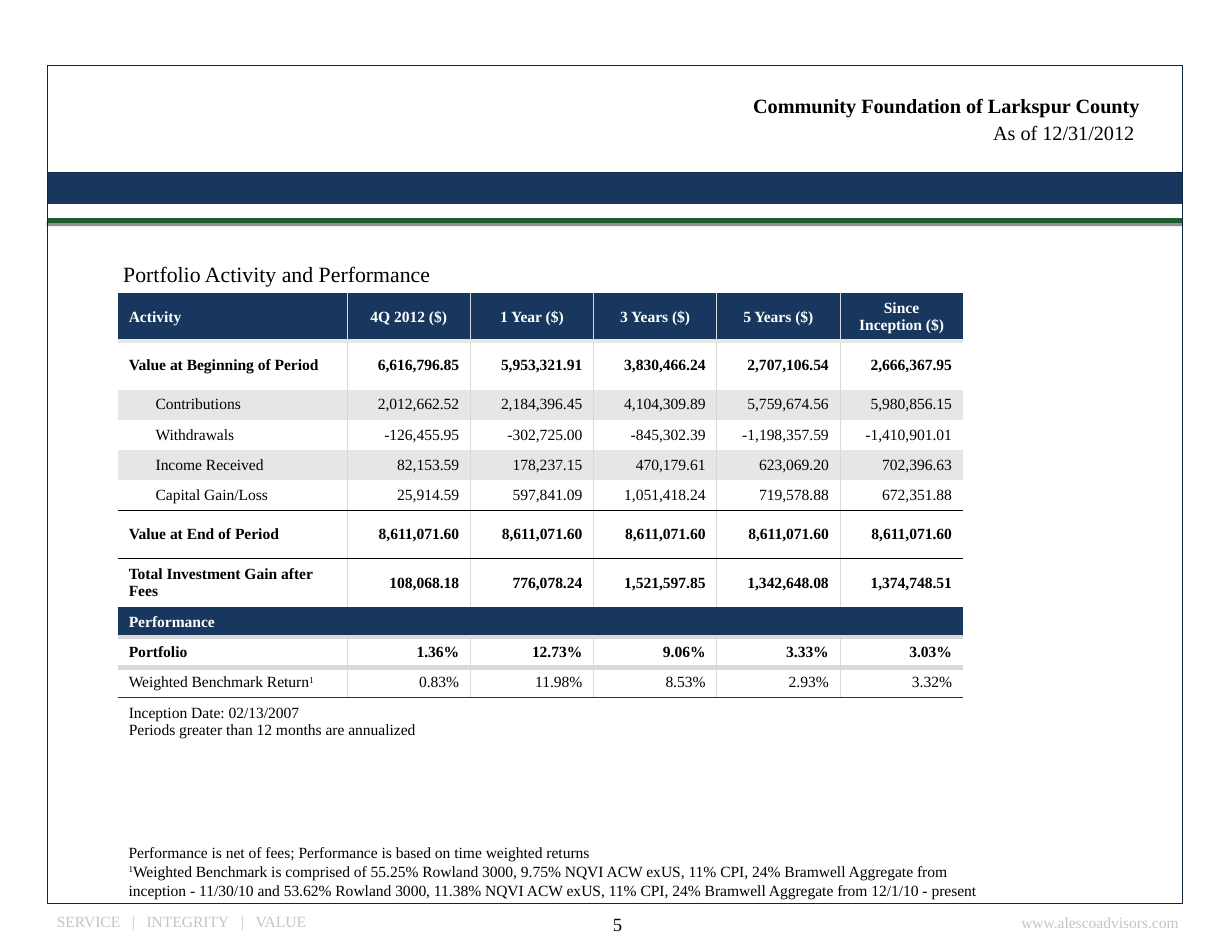
import pptx
import pptx.util
import pptx.dml.color
import pptx.enum.shapes
import pptx.enum.text
import pptx.oxml.ns
from lxml import etree

Inches, Pt = pptx.util.Inches, pptx.util.Pt
ALIGN, ANCHOR = pptx.enum.text.PP_ALIGN, pptx.enum.text.MSO_ANCHOR
FONT = "Times New Roman"
NAVY, EDGE, GREEN = "17375E", "10253F", "215B33"
BLACK, WHITE, PALE, RULE, FAINT = "000000", "FFFFFF", "E6E6E6", "D9D9D9", "C5C5C5"

# Content
TITLE = "Community Foundation of Larkspur County"
AS_OF = "As of 12/31/2012 "
MOTTO = ["SERVICE", "INTEGRITY", "VALUE"]
SITE = "www.alescoadvisors.com"
NOTES = [
    [("Performance is net of fees; Performance is based on time weighted returns", {})],
    [("1", {"sup": True}),
     ("Weighted Benchmark is comprised of 55.25% Rowland 3000, 9.75% NQVI ACW exUS, 11% CPI, "
      "24% Bramwell Aggregate from inception - 11/30/10 and 53.62% Rowland 3000, "
      "11.38% NQVI ACW exUS, 11% CPI, 24% Bramwell Aggregate from 12/1/10 - present", {})],
]

# Each row: kind, label, values
ROWS = [
    ("title", "Portfolio Activity and Performance", []),
    ("head", "Activity", ["4Q 2012 ($)", "1 Year ($)", "3 Years ($)", "5 Years ($)",
                          "Since Inception ($)"]),
    ("total", "Value at Beginning of Period",
     ["6,616,796.85", "5,953,321.91", "3,830,466.24", "2,707,106.54", "2,666,367.95"]),
    ("shaded", "Contributions",
     ["2,012,662.52", "2,184,396.45", "4,104,309.89", "5,759,674.56", "5,980,856.15"]),
    ("item", "Withdrawals",
     ["-126,455.95", "-302,725.00", "-845,302.39", "-1,198,357.59", "-1,410,901.01"]),
    ("shaded", "Income Received",
     ["82,153.59", "178,237.15", "470,179.61", "623,069.20", "702,396.63"]),
    ("item", "Capital Gain/Loss",
     ["25,914.59", "597,841.09", "1,051,418.24", "719,578.88", "672,351.88"]),
    ("total", "Value at End of Period", ["8,611,071.60"] * 5),
    ("total", "Total Investment Gain after Fees",
     ["108,068.18", "776,078.24", "1,521,597.85", "1,342,648.08", "1,374,748.51"]),
    ("band", "Performance", []),
    ("result", "Portfolio", ["1.36%", "12.73%", "9.06%", "3.33%", "3.03%"]),
    ("plain", "Weighted Benchmark Return", ["0.83%", "11.98%", "8.53%", "2.93%", "3.32%"]),
    ("foot", "Inception Date: 02/13/2007\nPeriods greater than 12 months are annualized", []),
]
SUPERSCRIPTS = {"Weighted Benchmark Return": "1"}
COLUMNS = [0.23, 1.81] + [1.1] * 5

# Row kind: height, fill, run format
SMALL, TALL = 0.27, 0.43
KINDS = {
    "title": (0.33, WHITE, {"size": 14}),
    "head": (TALL, NAVY, {"bold": True, "color": WHITE}),
    "total": (TALL, WHITE, {"bold": True}),
    "shaded": (SMALL, PALE, {}),
    "item": (SMALL, WHITE, {}),
    "band": (SMALL, NAVY, {"bold": True, "color": WHITE}),
    "result": (SMALL, WHITE, {"bold": True}),
    "plain": (SMALL, WHITE, {}),
    "foot": (TALL, WHITE, {}),
}
# Horizontal rules below rows, by row number
RULES = {1: (PALE, 3), 6: (BLACK, 1), 7: (BLACK, 1), 8: (NAVY, 0.5),
         9: (RULE, 3), 10: (RULE, 3), 11: (NAVY, 0.5)}


def rgb(hex_color):
    return pptx.dml.color.RGBColor.from_string(hex_color)


def sub(parent, tag, **attrs):
    return etree.SubElement(parent, pptx.oxml.ns.qn(tag), {k: str(v) for k, v in attrs.items()})


def add_run(p, text, size=10, bold=False, color=BLACK, sup=False, spacing=0):
    r = p.add_run()
    r.text = text
    for name, value in {"name": FONT, "size": Pt(size), "bold": bold}.items():
        setattr(r.font, name, value)
    r.font.color.rgb = rgb(color)
    if sup:
        r.font._element.set("baseline", "30000")
    if spacing:
        r.font._element.set("spc", str(spacing))


def add_text(s, box, paragraphs, align=ALIGN.LEFT, wrap=True):
    tf = s.shapes.add_textbox(*map(Inches, box)).text_frame
    tf.word_wrap = wrap
    for i, runs in enumerate(paragraphs):
        p = tf.add_paragraph() if i else tf.paragraphs[0]
        p.alignment = align
        for text, fmt in runs:
            add_run(p, text, **fmt)


def add_box(s, box, fill, line):
    sp = s.shapes.add_shape(pptx.enum.shapes.MSO_SHAPE.RECTANGLE, *map(Inches, box))
    sp.shadow.inherit = False
    if fill:
        sp.fill.solid()
        sp.fill.fore_color.rgb = rgb(fill)
    else:
        sp.fill.background()
    sp.line.color.rgb = rgb(line)
    sp.line.width = Pt(0.5)


def add_border(cell, side, rule):
    tc_pr = cell._tc.get_or_add_tcPr()
    if rule:
        ln = sub(tc_pr, "a:ln" + side, w=Pt(rule[1]))
        sub(sub(ln, "a:solidFill"), "a:srgbClr", val=rule[0])
    else:
        sub(sub(tc_pr, "a:ln" + side, w=0), "a:noFill")


def add_table(s, left, top):
    heights = [KINDS[kind][0] for kind, _, _ in ROWS]
    frame = s.shapes.add_table(len(ROWS), len(COLUMNS), Inches(left), Inches(top),
                               Inches(sum(COLUMNS)), Inches(sum(heights)))
    table = frame.table
    table.first_row = table.horz_banding = False
    style = table._tbl.tblPr.find(pptx.oxml.ns.qn("a:tableStyleId"))
    style.text = "{2D5ABB26-0587-4C30-8999-92F81FD0307C}"
    for column, width in zip(table.columns, COLUMNS):
        column.width = Inches(width)
    last = len(COLUMNS) - 1
    for i, (kind, label, values) in enumerate(ROWS):
        height, fill, fmt = KINDS[kind]
        table.rows[i].height = Inches(height)
        indented = kind in ("shaded", "item")
        texts = ["", label] if indented else [label, ""]
        texts += values or [""] * 5
        for c, text in enumerate(texts):
            cell = table.cell(i, c)
            divider = (RULE, 0.5) if values else None
            right = c < last and (c > 0 or not indented)
            add_border(cell, "L", divider if c > 1 else None)
            add_border(cell, "R", divider if right else None)
            add_border(cell, "T", RULES.get(i - 1))
            add_border(cell, "B", RULES.get(i))
            cell.fill.solid()
            cell.fill.fore_color.rgb = rgb(fill)
            cell.vertical_anchor = ANCHOR.BOTTOM if kind == "title" else ANCHOR.MIDDLE
            cell.margin_left = Inches(0.05 if kind == "title" else 0.1)
            for j, line in enumerate(text.split("\n")):
                p = cell.text_frame.add_paragraph() if j else cell.text_frame.paragraphs[0]
                if c > 1:
                    p.alignment = ALIGN.CENTER if kind == "head" else ALIGN.RIGHT
                if line:
                    add_run(p, line, **fmt)
                else:
                    sub(p._p, "a:endParaRPr", sz=1000)
                if line in SUPERSCRIPTS:
                    add_run(p, SUPERSCRIPTS[line], sup=True, **fmt)
        if not indented:
            table.cell(i, 0).merge(table.cell(i, 1 if values else last))


def add_green_rule(s, left, right, y):
    line = s.shapes.add_connector(pptx.enum.shapes.MSO_CONNECTOR.STRAIGHT,
                                  Inches(left), Inches(y), Inches(right), Inches(y))
    line.line.color.rgb = rgb(GREEN)
    line.line.width = Pt(3)
    effects = sub(line._element.spPr, "a:effectLst")
    shadow = sub(effects, "a:outerShdw", blurRad=0, dist=Pt(2), dir=98 * 60000, rotWithShape=0)
    sub(sub(shadow, "a:srgbClr", val=BLACK), "a:alpha", val=43000)


def main():
    prs = pptx.Presentation()
    prs.slide_width, prs.slide_height = Inches(11), Inches(8.5)
    s = prs.slides.add_slide(prs.slide_layouts[6])

    # Frame and header bands
    left, top, width, band_top = 0.42, 0.58, 10.14, 1.54
    add_box(s, (left, band_top, width, 0.28), NAVY, NAVY)
    add_green_rule(s, left, left + width, 1.97)
    add_box(s, (left, top, width, 7.49), None, EDGE)
    add_box(s, (left, top, width, band_top - top), WHITE, EDGE)

    # Heading
    add_text(s, (6.46, 1.02, 3.81, 0.32), [[(AS_OF, {"size": 13})]], ALIGN.RIGHT)
    add_text(s, (2.9, 0.78, 7.37, 0.32), [[(TITLE, {"size": 13, "bold": True})]], ALIGN.RIGHT)

    # Footer
    faint, gap = {"color": FAINT}, (" ", {"color": FAINT, "spacing": 500})
    motto = [(MOTTO[0], faint)]
    for word in MOTTO[1:]:
        motto += [gap, ("|", faint), gap, (word, faint)]
    add_text(s, (4.23, 8.1, 2.57, 0.45), [[("5", {"size": 12})]], ALIGN.CENTER)
    add_text(s, (9.02, 8.1, 1.62, 0.27), [[(SITE, faint)]], wrap=False)
    add_text(s, (0.41, 8.09, 2.46, 0.27), [motto], wrap=False)

    # Table and notes
    add_table(s, 1.05, 2.28)
    add_text(s, (1.05, 7.48, 8, 0.61), NOTES)
    prs.save("out.pptx")


if __name__ == "__main__":
    main()
